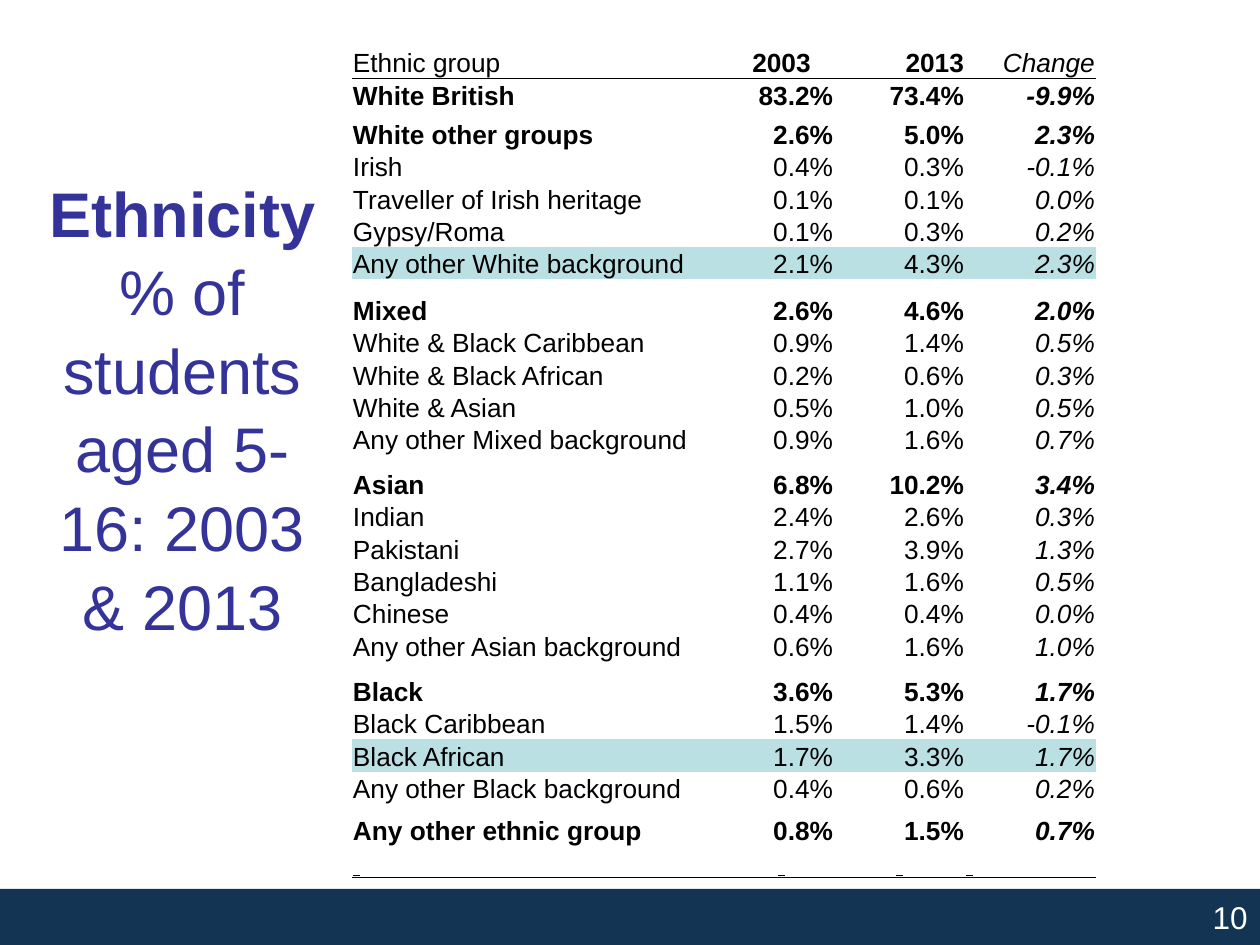
from lxml.etree import SubElement
from pptx import Presentation
from pptx.dml.color import RGBColor
from pptx.enum.shapes import MSO_SHAPE
from pptx.enum.text import MSO_ANCHOR, PP_ALIGN
from pptx.oxml.ns import qn
from pptx.util import Pt

EMU_PER_PX = 914400 / 126
NO_STYLE = "{2D5ABB26-0587-4C30-8999-92F81FD0307C}"
BLACK, WHITE, INDIGO, NAVY, AQUA = "000000", "FFFFFF", "333399", "133452", "BBE0E3"

HEADER = ("Ethnic group", "2003", "2013", "Change")
# Each group: its total row, then its member rows
GROUPS = [
    [("White British", "83.2%", "73.4%", "-9.9%")],
    [("White other groups", "2.6%", "5.0%", "2.3%"),
     ("Irish", "0.4%", "0.3%", "-0.1%"),
     ("Traveller of Irish heritage", "0.1%", "0.1%", "0.0%"),
     ("Gypsy/Roma", "0.1%", "0.3%", "0.2%"),
     ("Any other White background", "2.1%", "4.3%", "2.3%")],
    [("Mixed", "2.6%", "4.6%", "2.0%"),
     ("White & Black Caribbean", "0.9%", "1.4%", "0.5%"),
     ("White & Black African", "0.2%", "0.6%", "0.3%"),
     ("White & Asian", "0.5%", "1.0%", "0.5%"),
     ("Any other Mixed background", "0.9%", "1.6%", "0.7%")],
    [("Asian", "6.8%", "10.2%", "3.4%"),
     ("Indian", "2.4%", "2.6%", "0.3%"),
     ("Pakistani", "2.7%", "3.9%", "1.3%"),
     ("Bangladeshi", "1.1%", "1.6%", "0.5%"),
     ("Chinese", "0.4%", "0.4%", "0.0%"),
     ("Any other Asian background", "0.6%", "1.6%", "1.0%")],
    [("Black", "3.6%", "5.3%", "1.7%"),
     ("Black Caribbean", "1.5%", "1.4%", "-0.1%"),
     ("Black African", "1.7%", "3.3%", "1.7%"),
     ("Any other Black background", "0.4%", "0.6%", "0.2%")],
    [("Any other ethnic group", "0.8%", "1.5%", "0.7%")],
]
HIGHLIGHTS = {"Any other White background", "Black African"}
COLUMN_WIDTHS = (377, 105, 131, 131)
ROW_HEIGHTS = (33, 33, 39, 32, 33, 32, 32, 47, 32, 33, 32, 32,
               45, 32, 33, 32, 32, 33, 45, 32, 33, 32, 42, 32)


def px(length):
    return round(length * EMU_PER_PX)


def color(value):
    return RGBColor.from_string(value)


def format_font(font, fill, **values):
    font.color.rgb = color(fill)
    for name, value in {"name": "Arial", **values}.items():
        setattr(font, name, value)


def add_footer(slide, left, top, width, height):
    band = slide.shapes.add_shape(
        MSO_SHAPE.RECTANGLE, px(left), px(top), px(width), px(height))
    band.shadow.inherit = False
    band.fill.solid()
    band.fill.fore_color.rgb = color(NAVY)
    band.line.fill.background()
    paragraph = band.text_frame.paragraphs[0]
    paragraph.alignment = PP_ALIGN.RIGHT
    run = paragraph.add_run()
    run.text = "10"
    format_font(run.font, WHITE, size=Pt(18))


def place_title(slide, left, top, width, height):
    title = slide.shapes.title
    box = {"left": left, "top": top, "width": width, "height": height}
    for name, value in box.items():
        setattr(title, name, px(value))
    title.text_frame.word_wrap = True
    title.text_frame.vertical_anchor = MSO_ANCHOR.MIDDLE
    paragraph = title.text_frame.paragraphs[0]
    paragraph.alignment = PP_ALIGN.CENTER
    paragraph.line_spacing = 1.04
    heading = paragraph.add_run()
    heading.text = "Ethnicity"
    paragraph.add_line_break()
    subject = paragraph.add_run()
    subject.text = "% of students aged 5-16: 2003 & 2013"
    for run, bold in ((heading, True), (subject, False)):
        format_font(run.font, INDIGO, size=Pt(36), bold=bold)


def add_bottom_border(cell):
    line = SubElement(cell._tc.get_or_add_tcPr(), qn("a:lnB"), w=str(Pt(0.5)))
    fill = SubElement(line, qn("a:solidFill"))
    SubElement(fill, qn("a:srgbClr"), val=BLACK)


def fill_cell(cell, text, alignment, fill=None, border=False, **font_values):
    margins = {"margin_left": 1, "margin_top": 1, "margin_right": 1, "margin_bottom": 0}
    for name, value in margins.items():
        setattr(cell, name, px(value))
    cell.vertical_anchor = MSO_ANCHOR.BOTTOM
    if border:
        add_bottom_border(cell)
    if fill:
        cell.fill.solid()
        cell.fill.fore_color.rgb = color(fill)
    else:
        cell.fill.background()
    paragraph = cell.text_frame.paragraphs[0]
    paragraph.alignment = alignment
    run = paragraph.add_run()
    run.text = text
    format_font(run.font, BLACK, size=Pt(15), **font_values)


def add_ethnicity_table(slide, left, top):
    frame = slide.shapes.add_table(
        len(ROW_HEIGHTS), len(COLUMN_WIDTHS), px(left), px(top),
        px(sum(COLUMN_WIDTHS)), px(sum(ROW_HEIGHTS)))
    table = frame.table
    table.first_row = table.horz_banding = False
    table._tbl.tblPr.find(qn("a:tableStyleId")).text = NO_STYLE
    for column, width in zip(table.columns, COLUMN_WIDTHS):
        column.width = px(width)
    for row, height in zip(table.rows, ROW_HEIGHTS):
        row.height = px(height)

    start, center, end = PP_ALIGN.LEFT, PP_ALIGN.CENTER, PP_ALIGN.RIGHT
    # Header row
    for index, alignment in enumerate((start, center, end, end)):
        fill_cell(table.cell(0, index), HEADER[index], alignment, border=True,
                  bold=index in (1, 2), italic=index == 3)
    # Group totals in bold, members in regular, change in italic
    rows = [(values, position == 0) for group in GROUPS
            for position, values in enumerate(group)]
    for row_index, (values, is_total) in enumerate(rows, start=1):
        fill = AQUA if values[0] in HIGHLIGHTS else None
        for index, text in enumerate(values):
            fill_cell(table.cell(row_index, index), text, end if index else start,
                      fill, bold=is_total, italic=index == 3)
    # Closing rule with underlined blanks
    for index, alignment in enumerate((start, center, center, start)):
        fill_cell(table.cell(len(rows) + 1, index), " ", alignment,
                  border=True, underline=True)


def main():
    presentation = Presentation()
    presentation.slide_width, presentation.slide_height = px(1260), px(945)
    slide = presentation.slides.add_slide(presentation.slide_layouts[5])
    add_footer(slide, 0, 889, 1260, 56)
    place_title(slide, 34, 55, 297, 704)
    add_ethnicity_table(slide, 352, 45)
    presentation.save("out.pptx")


if __name__ == "__main__":
    main()
